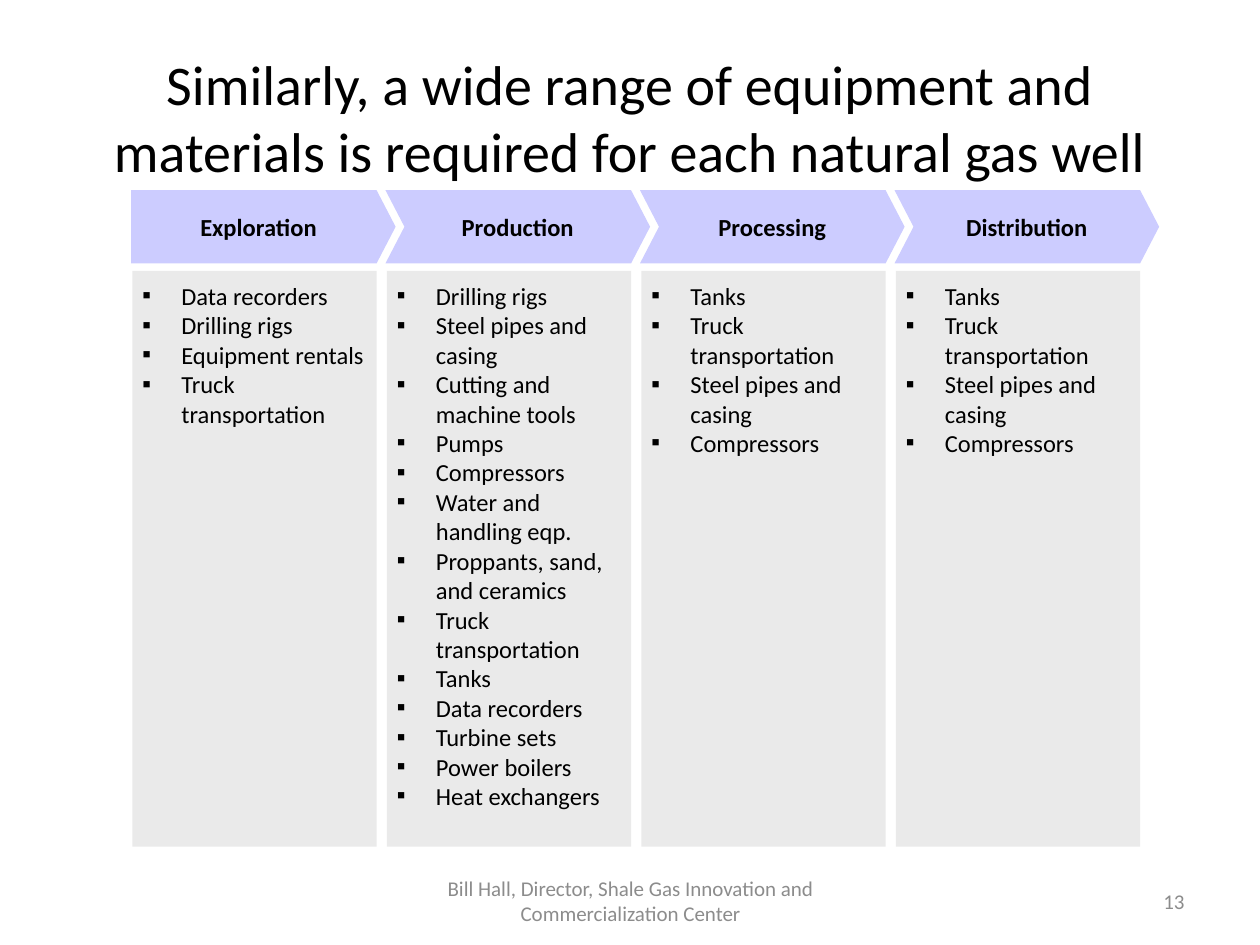
import pptx
import pptx.util
import pptx.dml.color
import pptx.enum.shapes
import pptx.enum.text
import pptx.oxml
import pptx.oxml.ns

Inches = pptx.util.Inches
SHAPE = pptx.enum.shapes.MSO_SHAPE
ALIGN = pptx.enum.text.PP_ALIGN
ANCHOR = pptx.enum.text.MSO_ANCHOR

FONT = "Calibri"
BLACK, GREY = "000000", "8C8C8C"
PANEL, ARROW = "EAEAEA", "CCCCFF"
LEFT, PITCH = 1.04, 2.02

STAGES = [
    ("Exploration", ["Data recorders", "Drilling rigs", "Equipment rentals",
                     "Truck transportation"]),
    ("Production", ["Drilling rigs", "Steel pipes and casing",
                    "Cutting and machine tools", "Pumps", "Compressors",
                    "Water and handling eqp.", "Proppants, sand, and ceramics",
                    "Truck transportation", "Tanks", "Data recorders",
                    "Turbine sets", "Power boilers", "Heat exchangers"]),
    ("Processing", ["Tanks", "Truck transportation",
                    "Steel pipes and casing", "Compressors"]),
    ("Distribution", ["Tanks", "Truck transportation",
                      "Steel pipes and casing", "Compressors"]),
]


def rgb(value):
    return pptx.dml.color.RGBColor.from_string(value)


def add_bullet(p):
    pPr = p._p.get_or_add_pPr()
    pPr.set("marL", str(Inches(0.31)))
    pPr.set("indent", str(-Inches(0.31)))
    ns = pptx.oxml.ns.nsdecls("a")
    for xml in (f'<a:buClr {ns}><a:srgbClr val="{BLACK}"/></a:buClr>',
                f'<a:buFont {ns} typeface="{FONT}"/>',
                f'<a:buChar {ns} char="▪"/>'):
        pPr.append(pptx.oxml.parse_xml(xml))


def write(tf, *lines, size=14, color=BLACK, bold=False, align=ALIGN.LEFT,
          anchor=ANCHOR.MIDDLE, inset=None, bullet=False):
    tf.word_wrap = True
    tf.auto_size = pptx.enum.text.MSO_AUTO_SIZE.NONE
    tf.vertical_anchor = anchor
    if inset is not None:
        tf.margin_left = tf.margin_right = Inches(inset)
        tf.margin_top = tf.margin_bottom = Inches(inset)
    for i, line in enumerate(lines):
        p = tf.add_paragraph() if i else tf.paragraphs[0]
        p.alignment = align
        if bullet:
            add_bullet(p)
        r = p.add_run()
        r.text = line
        r.font.name = FONT
        r.font.size = pptx.util.Pt(size)
        r.font.bold = bold
        r.font.color.rgb = rgb(color)


def place(sp, x, y, w, h):
    sp.left, sp.top, sp.width, sp.height = map(Inches, (x, y, w, h))


def add_block(s, kind, x, y, w, h, fill):
    sp = s.shapes.add_shape(kind, *map(Inches, (x, y, w, h)))
    sp.shadow.inherit = False
    sp.fill.solid()
    sp.fill.fore_color.rgb = rgb(fill)
    sp.line.fill.background()
    return sp


def add_panel(s, x, items):
    sp = add_block(s, SHAPE.RECTANGLE, x + 0.01, 2.15, 1.94, 4.57, PANEL)
    write(sp.text_frame, *items, anchor=ANCHOR.TOP, inset=0.08, bullet=True)


def add_arrow(s, x, name, first):
    kind = SHAPE.PENTAGON if first else SHAPE.CHEVRON
    sp = add_block(s, kind, x, 1.51, 2.1, 0.58, ARROW)
    sp.adjustments[0] = 0.26
    write(sp.text_frame, name, bold=True, align=ALIGN.CENTER, inset=0.05)


def add_footer(s, x, w, text, align):
    sp = s.shapes.add_textbox(*map(Inches, (x, 6.95, w, 0.4)))
    write(sp.text_frame, text, size=12, color=GREY, align=align)


def main():
    prs = pptx.Presentation()
    prs.slide_width, prs.slide_height = Inches(10), Inches(7.5)
    s = prs.slides.add_slide(prs.slide_layouts[5])
    title = s.shapes.title
    place(title, 0.5, 0.3, 9, 1.25)
    write(title.text_frame,
          "Similarly, a wide range of equipment and materials is required "
          "for each natural gas well", size=32, align=ALIGN.CENTER)
    for i, (name, items) in enumerate(STAGES):
        x = LEFT + i * PITCH
        add_panel(s, x, items)
        add_arrow(s, x, name, first=i == 0)
    add_footer(s, 3.42, 3.17, "Bill Hall, Director, Shale Gas Innovation and "
               "Commercialization Center", ALIGN.CENTER)
    add_footer(s, 7.17, 2.33, "13", ALIGN.RIGHT)
    prs.save("out.pptx")


if __name__ == "__main__":
    main()
